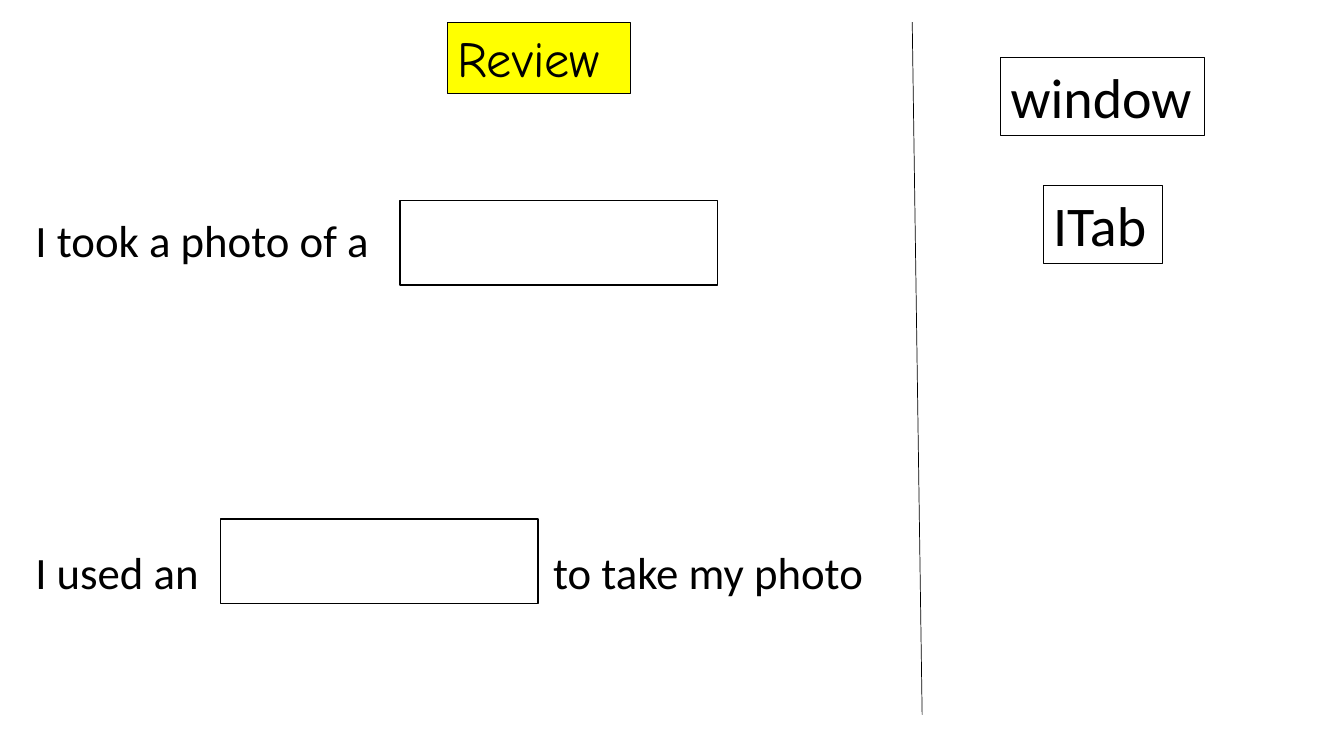
from dataclasses import dataclass

from lxml.etree import SubElement as Sub
from pptx import Presentation
from pptx.dml.color import RGBColor as Rgb
from pptx.enum.shapes import MSO_CONNECTOR as Conn, MSO_SHAPE as Form
from pptx.enum.text import MSO_ANCHOR as Anchor, MSO_AUTO_SIZE as Auto, PP_ALIGN as Align
from pptx.oxml.ns import qn
from pptx.util import Cm, Pt


@dataclass(frozen=True)
class Theme:
    """Colours, fonts and type sizes of the slide."""
    ink: Rgb = Rgb(0, 0, 0)
    paper: Rgb = Rgb(255, 255, 255)
    mark: Rgb = Rgb(255, 255, 0)
    body: str = "Calibri"
    hand: str = "Comic Neue"
    text: int = 32
    head: int = 36
    word: int = 40


class Board:
    """Draws the parts of a fill-the-gap exercise on one slide."""

    def __init__(self, slide, theme):
        """Keep the slide and its style."""
        self.slide, self.theme = slide, theme

    def place(self, shape, left, top, width, height):
        """Move and size a shape in centimetres."""
        shape.left, shape.top = Cm(left), Cm(top)
        shape.width, shape.height = Cm(width), Cm(height)

    def label(self, para, text, size, face):
        """Put left-aligned text in a paragraph."""
        para.text = text
        para.alignment = Align.LEFT
        font = para.font
        font.size, font.name, font.color.rgb = Pt(size), face, self.theme.ink

    def phrase(self, shape, box, text, tab=None):
        """Set a sentence, with an optional tab stop after its gap."""
        self.place(shape, *box)
        frame = shape.text_frame
        frame.word_wrap, frame.auto_size = True, Auto.NONE
        frame.vertical_anchor = Anchor.MIDDLE
        para = frame.paragraphs[0]
        para.line_spacing = 0.9
        if tab:
            stops = Sub(para._p.get_or_add_pPr(), qn("a:tabLst"))
            Sub(stops, qn("a:tab"), pos=str(Cm(tab)), algn="l")
        self.label(para, text, self.theme.text, self.theme.body)

    def title(self, box, text):
        """Set the first sentence in the title placeholder."""
        self.phrase(self.slide.shapes.title, box, text)

    def line(self, box, text, tab):
        """Add a sentence in a text box."""
        shape = self.slide.shapes.add_textbox(*map(Cm, box))
        self.phrase(shape, box, text, tab)

    def frame(self, box, fill=None, width=1):
        """Add an outlined rectangle."""
        shape = self.slide.shapes.add_shape(Form.RECTANGLE, *map(Cm, box))
        shape.shadow.inherit = False
        shape.line.color.rgb, shape.line.width = self.theme.ink, Pt(width)
        if fill is None:
            shape.fill.background()
        else:
            shape.fill.solid()
            shape.fill.fore_color.rgb = fill
        return shape

    def card(self, box, text, size, face, fill=None):
        """Add a framed word."""
        frame = self.frame(box, fill, 0.75).text_frame
        frame.vertical_anchor = Anchor.TOP
        frame.word_wrap, frame.margin_right = True, 0
        self.label(frame.paragraphs[0], text, size, face)

    def rule(self, start, end):
        """Add a thin straight line."""
        line = self.slide.shapes.add_connector(Conn.STRAIGHT, *map(Cm, start + end))
        line.line.color.rgb, line.line.width = self.theme.ink, Pt(0.5)
        Sub(line._element.spPr, qn("a:effectLst"))


def main():
    """Build and save the review slide."""
    deck = Presentation()
    deck.slide_width, deck.slide_height = Cm(33.87), Cm(19.05)
    theme = Theme()
    board = Board(deck.slides.add_slide(deck.slide_layouts[5]), theme)

    board.title((0.64, 4.29, 16.97, 3.68), "I took a photo of a")
    board.card((11.28, 0.56, 4.6, 1.8), "Review", theme.head, theme.hand, theme.mark)
    board.line((0.64, 12.65, 22.35, 3.68), "I used an\tto take my photo", 13.05)
    for left, top in ((10.08, 5.05), (5.56, 13.08)):
        board.frame((left, top, 8, 2.13), theme.paper)
    board.rule((22.99, 0.56), (23.24, 18.01))
    for left, top, width, word in ((25.22, 1.45, 5.13, "window"), (26.29, 4.67, 3, "ITab")):
        board.card((left, top, width, 1.96), word, theme.word, theme.body)

    deck.save("out.pptx")


if __name__ == "__main__":
    main()
